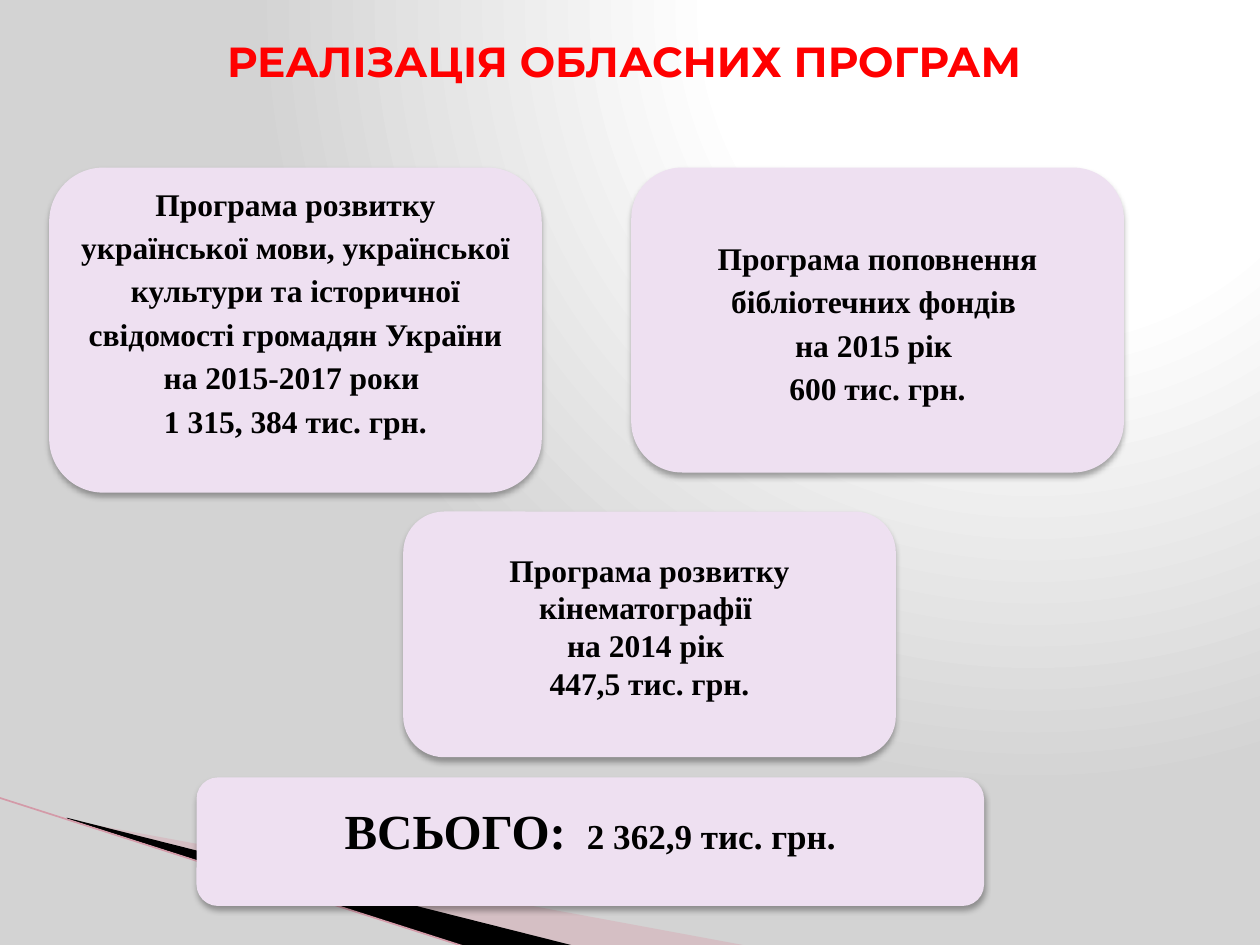
from lxml import etree
from pptx import Presentation
from pptx import util as u
from pptx.dml.color import RGBColor
from pptx.enum import shapes, text
from pptx.oxml import parse_xml
from pptx.oxml.ns import nsdecls, qn

presentation = Presentation()
presentation.slide_width, presentation.slide_height = u.Inches(10), u.Inches(7.5)
slide = presentation.slides.add_slide(presentation.slide_layouts[6])
column = presentation.slide_width / 100
row = presentation.slide_height / 100


def color(value):
    return RGBColor.from_string(value)


def write(paragraph, runs, spacing, **font_values):
    """Fill a centred paragraph with (words, size) runs."""
    paragraph.alignment = text.PP_ALIGN.CENTER
    paragraph.line_spacing = spacing
    for words, size in runs:
        run = paragraph.add_run()
        run.text = words
        run.font.color.rgb = color(font_values["rgb"])
        for name, value in {"size": u.Pt(size), "bold": True, "name": font_values["name"]}.items():
            setattr(run.font, name, value)


# Background: a light spot near the top right
slide.background.fill.gradient()
gradient = slide.background._cSld.find(".//" + qn("a:gradFill"))
gradient.getparent().replace(gradient, parse_xml(
    f'<a:gradFill {nsdecls("a")} rotWithShape="1"><a:gsLst>'
    + "".join(f'<a:gs pos="{stop * 1000}"><a:srgbClr val="{value}"/></a:gs>'
              for stop, value in ((0, "FFFFFF"), (40, "FFFFFF"), (100, "D3D3D3")))
    + '</a:gsLst><a:path path="circle"><a:fillToRect l="65000" t="0" r="0" b="98000"/></a:path>'
    '</a:gradFill>'))

# Corner wedges: points in columns and rows
wedges = [
    ([(5.5, 86.8), (59.5, 100.13), (45.6, 100.13), (5.5, 86.67)], "D8A3AF", 40),
    ([(5.3, 86.53), (45.7, 100.13), (37.2, 100.27), (5.4, 86.67)], "000000", 100),
]
for points, fill, opacity in wedges:
    corners = [(round(x * column), round(y * row)) for x, y in points]
    builder = slide.shapes.build_freeform(*corners[0])
    builder.add_line_segments(corners[1:], close=True)
    wedge = builder.convert_to_shape()
    wedge.shadow.inherit = False
    wedge.fill.solid()
    wedge.fill.fore_color.rgb = color(fill)
    wedge.line.fill.background()
    if opacity < 100:
        fill_color = wedge._element.spPr.find(".//" + qn("a:srgbClr"))
        etree.SubElement(fill_color, qn("a:alpha"), val=str(opacity * 1000))

edge = slide.shapes.add_connector(
    shapes.MSO_CONNECTOR.STRAIGHT,
    *(round(v) for v in (-0.1 * column, 84.4 * row, 37.1 * column, 100.27 * row)))
edge.line.color.rgb = color("D39AA8")
edge.line.width = u.Pt(0.95)
etree.SubElement(edge._element.spPr, qn("a:effectLst"))

title = slide.shapes.add_textbox(0, round(3.07 * row), presentation.slide_width, round(6.67 * row))
title.text_frame.word_wrap = True
write(title.text_frame.paragraphs[0], [("РЕАЛІЗАЦІЯ ОБЛАСНИХ ПРОГРАМ ", 24)], 1,
      name="Montserrat", rgb="FF0000")

# Cards: left, top, width, height in columns and rows; bottom inset; line spacing; paragraphs
cards = [
    (32, 54.13, 39.1, 26, 0.18, 1, [
        [("Програма розвитку кінематографії ", 18)],
        [("на 2014 рік ", 18)],
        [("447,5 тис. грн.", 18)]]),
    (3.9, 17.73, 39.1, 34.4, 0.38, 1.15, [
        [("Програма розвитку української мови, української культури та історичної "
          "свідомості громадян України на 2015-2017 роки ", 18)],
        [("1 315, 384 тис. грн.", 18)]]),
    (50.1, 17.73, 39.1, 32.27, 0.05, 1.15, [
        [("Програма поповнення бібліотечних фондів ", 18)],
        [("на 2015 рік ", 18)],
        [("600 тис. грн.", 18)]]),
    (15.6, 82.27, 62.5, 13.6, 0.3, 1.15, [
        [("ВСЬОГО: ", 28), (" 2 362,9 тис. грн.", 20)]]),
]
for left, top, width, height, bottom_inset, spacing, paragraphs in cards:
    card = slide.shapes.add_shape(
        shapes.MSO_SHAPE.ROUNDED_RECTANGLE,
        *(round(v) for v in (left * column, top * row, width * column, height * row)))
    card.fill.solid()
    card.fill.fore_color.rgb = color("EEE0F1")
    card.line.fill.background()
    card._element.spPr.append(parse_xml(
        f'<a:effectLst {nsdecls("a")}><a:outerShdw blurRad="{u.Pt(3.5)}" dist="{u.Pt(2.2)}" '
        'dir="5400000" rotWithShape="0"><a:srgbClr val="000000"><a:alpha val="32000"/>'
        '</a:srgbClr></a:outerShdw></a:effectLst>'))
    frame = card.text_frame
    frame_values = {"word_wrap": True, "vertical_anchor": text.MSO_ANCHOR.MIDDLE,
                    "margin_bottom": u.Inches(bottom_inset)}
    for name, value in frame_values.items():
        setattr(frame, name, value)
    for index, runs in enumerate(paragraphs):
        paragraph = frame.add_paragraph() if index else frame.paragraphs[0]
        write(paragraph, runs, spacing, name="Times New Roman", rgb="000000")

presentation.save("out.pptx")
